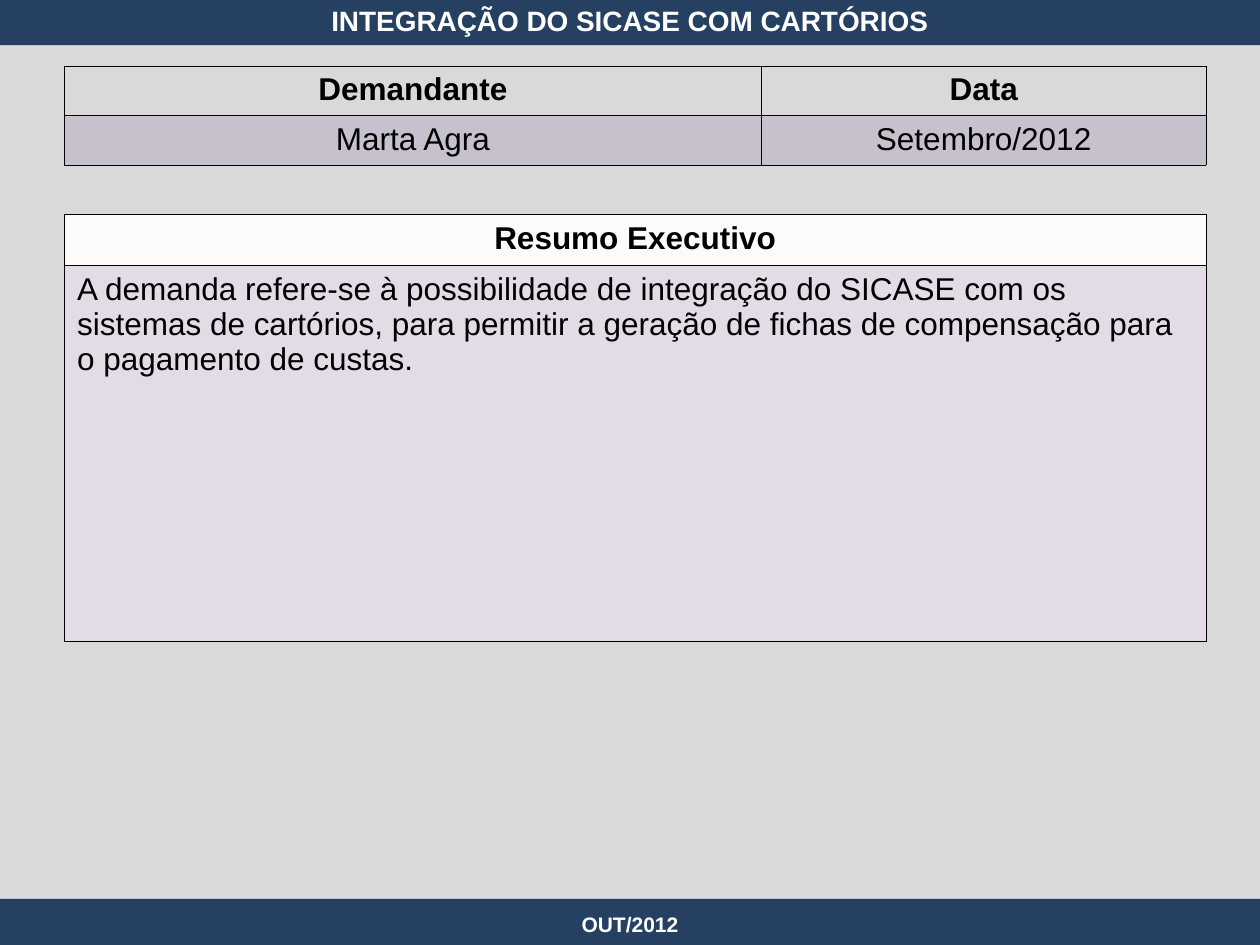
from lxml import etree
from pptx import Presentation
from pptx.dml.color import RGBColor
from pptx.enum.shapes import MSO_SHAPE
from pptx.enum.text import MSO_ANCHOR, PP_ALIGN
from pptx.oxml.ns import qn
from pptx.util import Cm, Pt

NAVY, GREY, IVORY, PURPLE = "254061", "D9D9D9", "FCFBF9", "8064A2"
WHITE, BLACK = "FFFFFF", "000000"
WIDTH, HEIGHT = 25.4, 19.05
BAND = 0.93
LEFT, TABLE_WIDTH = 1.3, 23.01


def color(value):
    """Turn a hex string into a colour."""
    return RGBColor.from_string(value)


class SlideBuilder:
    """Hold the style and the current slide, and draw each kind of element."""

    font = "Arial"

    def __init__(self, slide):
        self.slide = slide

    def bar(self, left, top, width, height, fill):
        shape = self.slide.shapes.add_shape(
            MSO_SHAPE.RECTANGLE, Cm(left), Cm(top), Cm(width), Cm(height))
        shape.shadow.inherit = False
        shape.fill.solid()
        shape.fill.fore_color.rgb = color(fill)
        shape.line.fill.background()

    def add_text(self, frame, text, size, fill=BLACK, bold=False, align=PP_ALIGN.CENTER):
        paragraph = frame.paragraphs[0]
        paragraph.alignment = align
        run = paragraph.add_run()
        run.text = text
        run.font.size = Pt(size)
        run.font.bold = bold
        run.font.name = self.font
        run.font.color.rgb = color(fill)
        return run

    def shadowed(self, shape, top, height, text, size):
        shape.left, shape.top = Cm(0), Cm(top)
        shape.width, shape.height = Cm(WIDTH), Cm(height)
        frame = shape.text_frame
        frame.word_wrap = True
        frame.vertical_anchor = MSO_ANCHOR.MIDDLE
        run = self.add_text(frame, text, size, WHITE, True)
        effects = etree.Element(qn("a:effectLst"))
        shadow = etree.SubElement(effects, qn("a:outerShdw"),
                                  blurRad="38100", dist="38100", dir="2700000")
        tint = etree.SubElement(shadow, qn("a:srgbClr"), val=BLACK)
        etree.SubElement(tint, qn("a:alpha"), val="43000")
        run._r.rPr.find(qn("a:solidFill")).addnext(effects)

    def title(self, text):
        shape = self.slide.shapes.title
        self.slide.shapes.element.append(shape.element)
        self.shadowed(shape, -0.28, 1.4, text, 16)

    def footer(self, text):
        shape = self.slide.shapes.add_textbox(0, 0, 0, 0)
        self.shadowed(shape, 18.14, 0.99, text, 12)

    def borders(self, cell):
        properties = cell._tc.get_or_add_tcPr()
        for side in ("lnL", "lnR", "lnT", "lnB"):
            line = etree.SubElement(properties, qn(f"a:{side}"), w=str(Pt(0.25)))
            fill = etree.SubElement(line, qn("a:solidFill"))
            etree.SubElement(fill, qn("a:srgbClr"), val=BLACK)

    def table(self, top, widths, heights, rows, body_align=PP_ALIGN.CENTER):
        table = self.slide.shapes.add_table(
            len(rows), len(widths), Cm(LEFT), Cm(top), Cm(sum(widths)), Cm(sum(heights))).table
        table.first_row = table.horz_banding = False
        for column, width in zip(table.columns, widths):
            column.width = Cm(width)
        for index, (row, height, texts) in enumerate(zip(table.rows, heights, rows)):
            row.height = Cm(height)
            header = index == 0
            for cell, text in zip(row.cells, texts):
                self.borders(cell)
                if header:
                    cell.fill.background()
                else:
                    cell.fill.solid()
                    cell.fill.fore_color.rgb = color(PURPLE)
                    tint = cell._tc.tcPr.find(qn("a:solidFill"))[0]
                    etree.SubElement(tint, qn("a:alpha"), val="20000")
                align = PP_ALIGN.CENTER if header else body_align
                self.add_text(cell.text_frame, text, 18, bold=header, align=align)


def main():
    presentation = Presentation()
    presentation.slide_width, presentation.slide_height = Cm(WIDTH), Cm(HEIGHT)
    builder = SlideBuilder(presentation.slides.add_slide(presentation.slide_layouts[5]))
    builder.bar(0, 0.91, WIDTH, 17.4, GREY)
    builder.bar(0, HEIGHT - BAND, WIDTH, BAND, NAVY)
    builder.bar(0, -0.02, WIDTH, BAND, NAVY)
    builder.footer("OUT/2012")
    builder.bar(LEFT, 4.32, TABLE_WIDTH, 8.61, IVORY)
    builder.title("INTEGRAÇÃO DO SICASE COM CARTÓRIOS")
    builder.table(1.33, [14.05, 8.96], [1, 1],
                  [["Demandante", "Data"], ["Marta Agra", "Setembro/2012"]])
    summary = ("A demanda refere-se à possibilidade de integração do SICASE com os sistemas "
               "de cartórios, para permitir a geração de fichas de compensação para o "
               "pagamento de custas.")
    builder.table(4.32, [TABLE_WIDTH], [1.03, 7.58],
                  [["Resumo Executivo"], [summary]], PP_ALIGN.LEFT)
    presentation.save("out.pptx")


if __name__ == "__main__":
    main()
